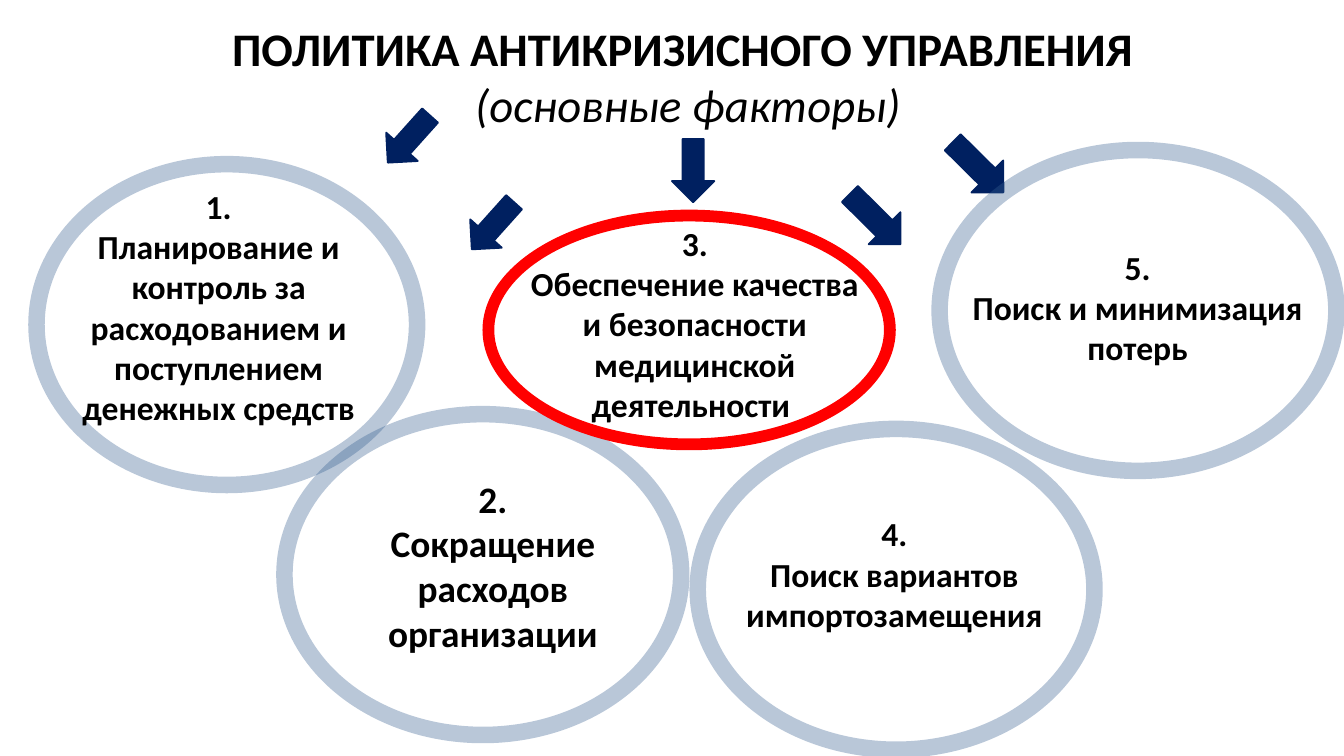
import pptx
import pptx.dml.color
import pptx.enum.shapes
import pptx.enum.text
import pptx.oxml
import pptx.oxml.ns
import pptx.util

RGBColor = pptx.dml.color.RGBColor
Shapes = pptx.enum.shapes.MSO_SHAPE

BLACK = RGBColor(0x00, 0x00, 0x00)
NAVY = RGBColor(0x00, 0x20, 0x60)
STEEL = RGBColor(0x37, 0x60, 0x92)
RED = RGBColor(0xFF, 0x00, 0x00)

COLUMNS, ROWS = 20, 11.25

TITLE = [
    ("ПОЛИТИКА АНТИКРИЗИСНОГО УПРАВЛЕНИЯ ", {"bold": True}),
    ("(основные факторы)", {"italic": True}),
]

# Each factor: ring area, ring colour, ring opacity, text area, text size, text
FACTORS = [
    ((0.42, 2.32, 5.91, 5.02), STEEL, 35, (0.42, 2.67, 5.67, 3.82), 36,
     "Планирование и контроль за расходованием и поступлением денежных средств"),
    ((4.11, 6.04, 6.15, 5.02), STEEL, 35, (4.67, 6.99, 5.33, 2.87), 40,
     "Сокращение расходов организации"),
    ((7.18, 3.12, 6.15, 3.58), RED, 100, (7.66, 3.22, 5.36, 3.21), 36,
     "Обеспечение качества и безопасности медицинской деятельности "),
    ((10.26, 6.26, 6.15, 5.02), STEEL, 35, (10.63, 7.55, 5.36, 2), 36,
     "Поиск вариантов импортозамещения"),
    ((13.86, 2.11, 6.15, 5.02), STEEL, 35, (14.25, 3.58, 5.36, 2), 36,
     "Поиск и минимизация потерь"),
]

ARROWS = [
    ((5.77, 1.6, 0.63, 0.94), 41.9),
    ((7.02, 2.89, 0.63, 0.94), 41.9),
    ((10, 2.07, 0.63, 0.94), 0),
    ((12.69, 2.73, 0.67, 1.06), 314.7),
    ((14.22, 1.96, 0.67, 1.06), 314.7),
]


class FactorSlide:
    """Holds the style and the current slide, and draws its elements."""

    font = {"name": "Calibri", "bold": False, "italic": False}
    frame = {
        "word_wrap": True,
        "auto_size": pptx.enum.text.MSO_AUTO_SIZE.SHAPE_TO_FIT_TEXT,
        "margin_left": pptx.util.Inches(0.18),
        "margin_right": pptx.util.Inches(0.18),
        "margin_top": pptx.util.Inches(0.09),
        "margin_bottom": pptx.util.Inches(0.09),
    }

    def __init__(self, deck):
        self.page = deck.slides.add_slide(deck.slide_layouts[6])
        self.column = deck.slide_width / COLUMNS
        self.row = deck.slide_height / ROWS

    def place(self, area):
        """Turn columns and rows into slide lengths."""
        steps = (self.column, self.row) * 2
        return [round(length * step) for length, step in zip(area, steps)]

    def shape(self, kind, area, color):
        """Add a flat preset shape in one colour."""
        shape = self.page.shapes.add_shape(kind, *self.place(area))
        shape.shadow.inherit = False
        shape.fill.solid()
        shape.fill.fore_color.rgb = color
        return shape

    def ring(self, area, color, opacity):
        """Add a thin ring, see-through below full opacity."""
        ring = self.shape(Shapes.DONUT, area, color)
        ring.adjustments[0] = 0.049
        ring.line.fill.background()
        if opacity < 100:
            tint = ring.fill._xPr.find(".//" + pptx.oxml.ns.qn("a:srgbClr"))
            alpha = pptx.oxml.parse_xml(
                f'<a:alpha {pptx.oxml.ns.nsdecls("a")} val="{opacity * 1000}"/>')
            tint.append(alpha)

    def arrow(self, area, angle):
        """Add a block arrow turned by an angle."""
        arrow = self.shape(Shapes.DOWN_ARROW, area, NAVY)
        arrow.rotation = angle
        arrow.line.color.rgb = NAVY
        arrow.line.width = pptx.util.Pt(2)

    def text(self, area, size, lines):
        """Add centred paragraphs, each with its own font values."""
        box = self.page.shapes.add_textbox(*self.place(area))
        for name, value in self.frame.items():
            setattr(box.text_frame, name, value)
        for index, (words, values) in enumerate(lines):
            para = box.text_frame.add_paragraph() if index else box.text_frame.paragraphs[0]
            para.alignment = pptx.enum.text.PP_ALIGN.CENTER
            span = para.add_run()
            span.text = words
            span.font.color.rgb = BLACK
            style = {**self.font, "size": pptx.util.Pt(size), **values}
            for name, value in style.items():
                setattr(span.font, name, value)


def main():
    deck = pptx.Presentation()
    deck.slide_width = pptx.util.Inches(20)
    deck.slide_height = pptx.util.Inches(11.25)
    slide = FactorSlide(deck)
    slide.text((1.58, 0.21, 17.32, 1.86), 50, TITLE)
    for area, angle in ARROWS:
        slide.arrow(area, angle)
    bold = {"bold": True}
    for number, (ring, color, opacity, area, size, words) in enumerate(FACTORS, 1):
        slide.ring(ring, color, opacity)
        slide.text(area, size, [(f"{number}.", bold), (words, bold)])
    deck.save("out.pptx")


if __name__ == "__main__":
    main()
